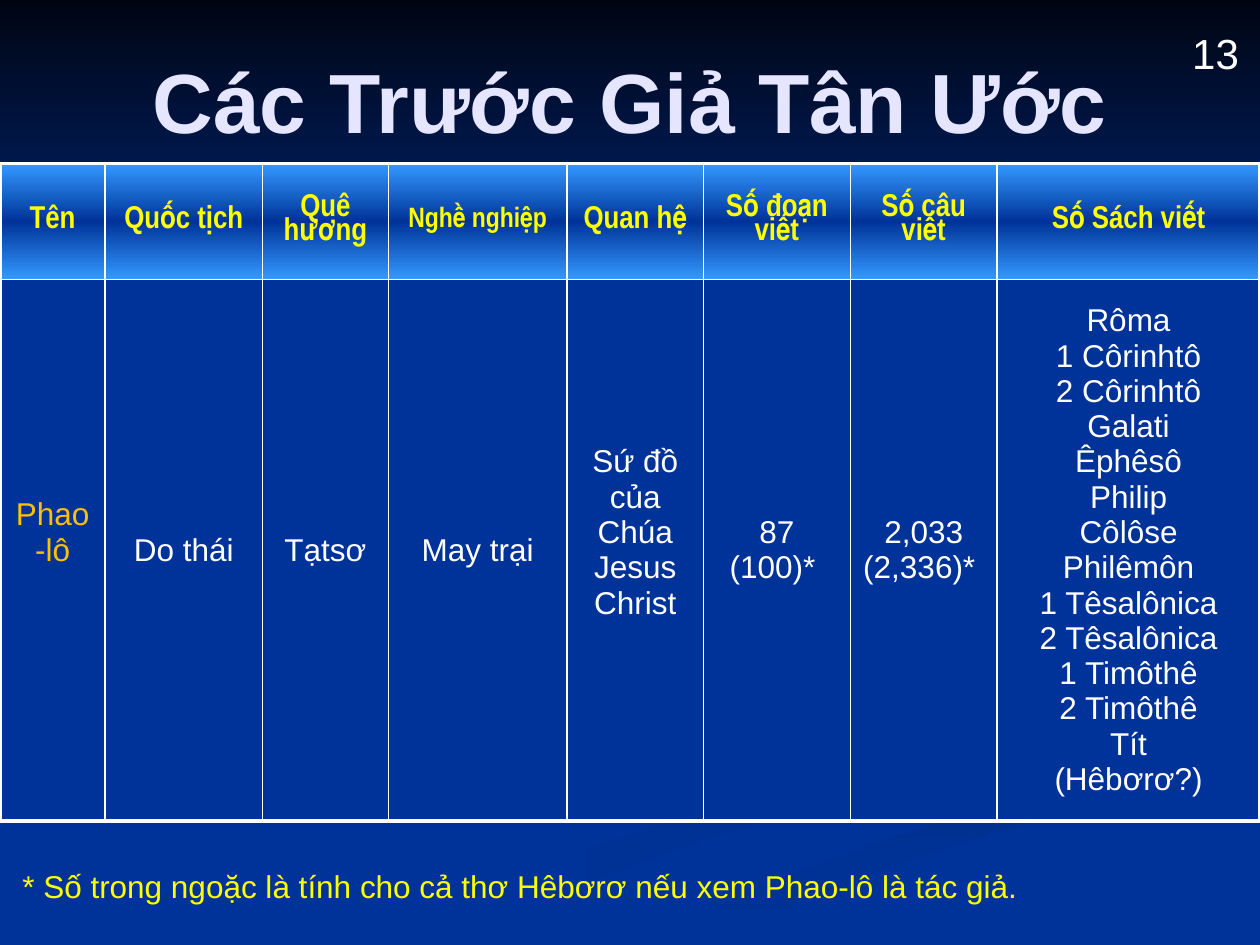
from lxml import etree
from pptx import Presentation
from pptx import util as u
from pptx.dml.color import RGBColor
from pptx.enum import shapes, text
from pptx.oxml import ns

NAVY, WHITE, YELLOW, GOLD = "003399", "FFFFFF", "FFFF00", "FFC000"
CENTER, LEFT = text.PP_ALIGN.CENTER, text.PP_ALIGN.LEFT


def colour(value):
    """Turn a hex string into a colour."""
    return RGBColor.from_string(value)


class Page:
    """Hold the style and the current slide, and draw its elements."""

    def __init__(self, deck):
        """Add a blank slide with a plain background."""
        self.font = "Arial"
        self.slide = deck.slides.add_slide(deck.slide_layouts[6])
        self.slide.background.fill.solid()
        self.slide.background.fill.fore_color.rgb = colour(NAVY)

    def gradient(self, fill, element, stops, angle):
        """Fill an element with evenly spaced colours, angle clockwise."""
        fill.gradient()
        fill.gradient_angle = -angle % 360
        holder = next(element.iter(ns.qn("a:gsLst")))
        for stop in list(holder):
            holder.remove(stop)
        for index, value in enumerate(stops):
            place = round(100000 * index / (len(stops) - 1))
            stop = etree.SubElement(holder, ns.qn("a:gs"), pos=str(place))
            etree.SubElement(stop, ns.qn("a:srgbClr"), val=value)

    def finish(self, shape, stops, angle):
        """Give a shape a gradient without outline or shadow."""
        shape.shadow.inherit = False
        shape.line.fill.background()
        self.gradient(shape.fill, shape._element, stops, angle)

    def band(self, left, top, width, height, stops):
        """Draw a rectangle shaded from top to bottom."""
        shape = self.slide.shapes.add_shape(
            shapes.MSO_SHAPE.RECTANGLE, *map(u.Cm, (left, top, width, height)))
        self.finish(shape, stops, 90)

    def ribbon(self, points, stops, angle):
        """Draw a closed outline through points in centimetres."""
        outline = [(u.Cm(x), u.Cm(y)) for x, y in points]
        builder = self.slide.shapes.build_freeform(*outline[0])
        builder.add_line_segments(outline[1:], close=True)
        self.finish(builder.convert_to_shape(), stops, angle)

    def put_lines(self, frame, lines, size, tint, align=CENTER, bold=False,
                  font=None, spacing=None):
        """Set one paragraph for each line."""
        for index, line in enumerate(lines):
            para = frame.add_paragraph() if index else frame.paragraphs[0]
            para.text, para.alignment = line, align
            para.font.size, para.font.bold = u.Pt(size), bold
            para.font.name = font or self.font
            para.font.color.rgb = colour(tint)
            if spacing:
                para.line_spacing = spacing

    def label(self, left, top, width, height, line, size, tint, wrap=True,
              anchor=text.MSO_ANCHOR.TOP, **style):
        """Place a text box."""
        box = self.slide.shapes.add_textbox(
            *map(u.Cm, (left, top, width, height)))
        box.text_frame.word_wrap = wrap
        box.text_frame.vertical_anchor = anchor
        self.put_lines(box.text_frame, [line], size, tint, **style)

    def border(self, cell, widths):
        """Set left, right, top and bottom borders of a cell."""
        holder = cell._tc.get_or_add_tcPr()
        for index, (side, width) in enumerate(zip("LRTB", widths)):
            line = etree.Element(ns.qn("a:ln" + side), w=str(u.Pt(width)))
            solid = etree.SubElement(line, ns.qn("a:solidFill"))
            etree.SubElement(solid, ns.qn("a:srgbClr"), val=WHITE)
            holder.insert(index, line)

    def table(self, left, top, widths, heights):
        """Add a table without banding and frame its cells."""
        grid = self.slide.shapes.add_table(
            len(heights), len(widths), u.Cm(left), u.Cm(top),
            u.Cm(sum(widths)), u.Cm(sum(heights))).table
        grid.first_row = grid.horz_banding = False
        for column, width in zip(grid.columns, widths):
            column.width = u.Cm(width)
        for row, height in zip(grid.rows, heights):
            row.height = u.Cm(height)
        last_row, last_column = len(heights) - 1, len(widths) - 1
        for r in range(len(heights)):
            for c in range(len(widths)):
                cell = grid.cell(r, c)
                cell.vertical_anchor = text.MSO_ANCHOR.MIDDLE
                edges = (c == 0, c == last_column, r == 0, r == last_row)
                self.border(cell, [2.25 if edge else 1 for edge in edges])
        return grid


deck = Presentation()
deck.slide_width, deck.slide_height = u.Cm(25.4), u.Cm(19.05)
page = Page(deck)

page.ribbon([(19.84, 14.05), (18.8, 13.64), (16.79, 13.03), (15.29, 12.45),
             (14.61, 11.91), (14.61, 11.66), (14.48, 11.99), (14.88, 12.37),
             (16.03, 12.83), (18.14, 13.46), (19.71, 14.05), (19.96, 14.38),
             (19.66, 14.81), (18.77, 15.19), (16.56, 15.75), (13.69, 16.48),
             (10.59, 17.53), (7.62, 19.02), (9.17, 19.02), (11.84, 17.78),
             (14.33, 16.89), (16.54, 16.26), (18.8, 15.7), (19.81, 15.37),
             (20.32, 14.76), (20.19, 14.4)], [NAVY, "003193"], 0)
page.ribbon([(13.18, 18.97), (12.78, 19.02), (14.5, 19.02), (15.24, 18.62),
             (16.48, 18.03), (18.34, 17.32), (20.85, 16.54), (22.94, 16),
             (25.35, 15.47), (25.35, 14.76), (24.13, 15.19), (22.02, 15.75),
             (19.41, 16.43), (17.68, 16.99), (15.21, 17.93), (13.79, 18.62)],
            ["002F8C", NAVY], 90)
page.band(0, 0, 25.4, 7.82, ["000514", NAVY])

page.label(1.9, 0.43, 21.6, 3.18, "Các Trước Giả Tân Ước", 48, "E5E5FF",
           anchor=text.MSO_ANCHOR.MIDDLE, bold=True)

headings = ["Tên", "Quốc tịch", "Quê hương", "Nghề nghiệp", "Quan hệ",
            "Số đoạn viết", "Số câu viết", "Số Sách viết"]
books = ["Rôma", "1 Côrinhtô", "2 Côrinhtô", "Galati", "Êphêsô", "Philip",
         "Côlôse", "Philêmôn", "1 Têsalônica", "2 Têsalônica", "1 Timôthê",
         "2 Timôthê", "Tít", "(Hêbơrơ?)"]
facts = [["Phao-lô"], ["Do thái"], ["Tạtsơ"], ["May trại"],
         ["Sứ đồ của Chúa Jesus Christ"], ["87", "(100)* "],
         ["2,033", "(2,336)* "], books]
authors = page.table(0, 3.3, [2.12, 3.17, 2.54, 3.6, 2.75, 2.96, 2.96, 5.3],
                     [2.33, 10.92])
for column, (heading, lines) in enumerate(zip(headings, facts)):
    head, body = authors.cell(0, column), authors.cell(1, column)
    page.gradient(head.fill, head._tc, ["3399FF", NAVY, "3399FF"], 90)
    page.put_lines(head.text_frame, [heading],
                   16 if heading == "Nghề nghiệp" else 18, YELLOW, bold=True,
                   font="Arial Narrow", spacing=0.8)
    body.fill.solid()
    body.fill.fore_color.rgb = colour(NAVY)
    page.put_lines(body.text_frame, lines, 18, WHITE if column else GOLD)
    if heading in ("Tên", "Quan hệ"):
        body.margin_bottom = u.Cm(0.84)

page.label(23.77, 0.43, 1.47, 1.3, "13", 24, WHITE, wrap=False)
page.label(0.2, 17.35, 21.8, 1.02,
           "* Số trong ngoặc là tính cho cả thơ Hêbơrơ nếu xem Phao-lô "
           "là tác giả.", 18, YELLOW, align=LEFT)
deck.save("out.pptx")
